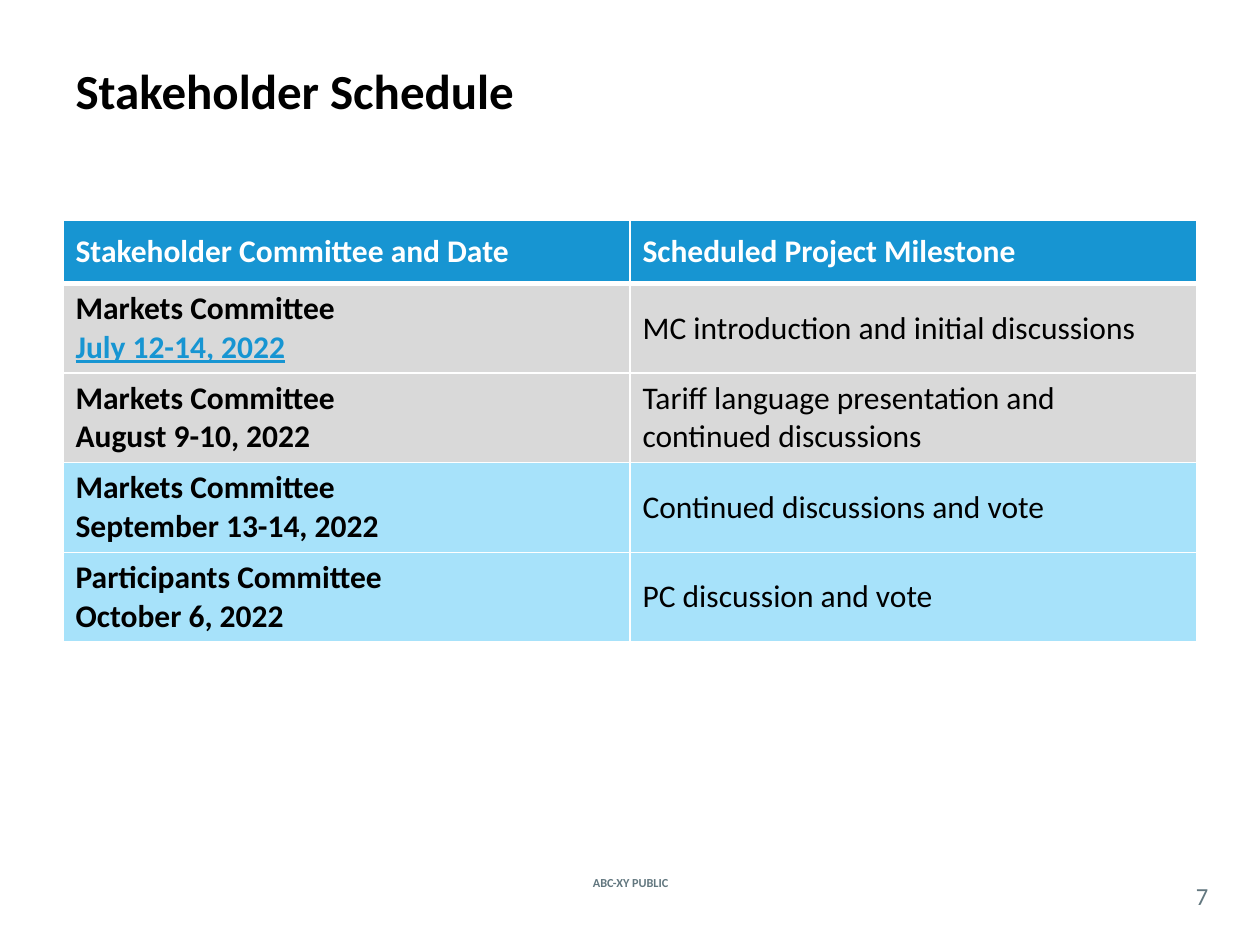
from lxml.etree import SubElement
from pptx import Presentation
from pptx.dml.color import RGBColor
from pptx.enum.text import MSO_ANCHOR as Anchor, MSO_AUTO_SIZE as AutoSize, PP_ALIGN as Align
from pptx.oxml.ns import qn
from pptx.util import Pt

COLORS = {
    "black": "000000", "white": "FFFFFF", "slate": "62777F",
    "blue": "1795D2", "past": "D9D9D9", "upcoming": "A7E2FA",
}


def write(frame, *lines, size=18, color="black", bold=False,
          align=Align.LEFT, underlined=None):
    """Fill a text frame with one paragraph per line; one line may be a link-like date."""
    frame.word_wrap = True
    for i, line in enumerate(lines):
        paragraph = frame.paragraphs[0] if i == 0 else frame.add_paragraph()
        paragraph.alignment = align
        run = paragraph.add_run()
        run.text = line
        font = run.font
        font.name, font.size, font.bold = "Calibri", Pt(size), bold
        marked = line == underlined
        font.underline = marked
        font.color.rgb = RGBColor.from_string(COLORS["blue" if marked else color])


def style_cell(cell, fill, top=1, bottom=1):
    """Give a cell white borders (widths in points) and a solid fill."""
    properties = cell._tc.get_or_add_tcPr()
    for side, width in (("L", 1), ("R", 1), ("T", top), ("B", bottom)):
        border = SubElement(properties, qn(f"a:ln{side}"), w=str(Pt(width)))
        border_fill = SubElement(border, qn("a:solidFill"))
        SubElement(border_fill, qn("a:srgbClr"), val=COLORS["white"])
    cell.fill.solid()
    cell.fill.fore_color.rgb = RGBColor.from_string(COLORS[fill])


prs = Presentation()
prs.slide_width, prs.slide_height = Pt(720), Pt(540)
slide = prs.slides.add_slide(prs.slide_layouts[5])

# Title
title = slide.shapes.title
title.left, title.top, title.width, title.height = Pt(36), Pt(30.24), Pt(648), Pt(41.76)
title.text_frame.auto_size = AutoSize.NONE
title.text_frame.vertical_anchor = Anchor.MIDDLE
write(title.text_frame, "Stakeholder Schedule", size=28, bold=True)

# Schedule table
header = ("Stakeholder Committee and Date", "Scheduled Project Milestone")
meetings = [
    ("Markets Committee", "July 12-14, 2022",
     "MC introduction and initial discussions", "past"),
    ("Markets Committee", "August 9-10, 2022",
     "Tariff language presentation and continued discussions", "past"),
    ("Markets Committee", "September 13-14, 2022",
     "Continued discussions and vote", "upcoming"),
    ("Participants Committee", "October 6, 2022",
     "PC discussion and vote", "upcoming"),
]
HEADER_HEIGHT, MEETING_HEIGHT = 36, 51.2
schedule = slide.shapes.add_table(
    len(meetings) + 1, 2, Pt(36), Pt(126), Pt(648),
    Pt(HEADER_HEIGHT + MEETING_HEIGHT * len(meetings))).table
schedule.rows[0].height = Pt(HEADER_HEIGHT)

for col, heading in enumerate(header):
    cell = schedule.cell(0, col)
    style_cell(cell, "blue", bottom=3)
    cell.vertical_anchor = Anchor.MIDDLE
    write(cell.text_frame, heading, color="white", bold=True)

for row, (committee, date, milestone, status) in enumerate(meetings, start=1):
    schedule.rows[row].height = Pt(MEETING_HEIGHT)
    meeting_cell, milestone_cell = schedule.cell(row, 0), schedule.cell(row, 1)
    for cell in (meeting_cell, milestone_cell):
        style_cell(cell, status, top=3 if row == 1 else 1)
    write(meeting_cell.text_frame, committee, date, bold=True,
          underlined="July 12-14, 2022")
    milestone_cell.vertical_anchor = Anchor.MIDDLE
    write(milestone_cell.text_frame, milestone)

# Footer: classification and page number
for text, left, top, width, height, size, bold in (
        ("ABC-XY PUBLIC", 307.44, 498.24, 105.84, 12.24, 7, True),
        ("7", 671.76, 501.12, 30.24, 20.88, 14, False)):
    frame = slide.shapes.add_textbox(Pt(left), Pt(top), Pt(width), Pt(height)).text_frame
    frame.margin_left = frame.margin_right = frame.margin_top = frame.margin_bottom = 0
    frame.vertical_anchor = Anchor.MIDDLE
    write(frame, text, size=size, color="slate", bold=bold, align=Align.CENTER)

prs.save("out.pptx")
